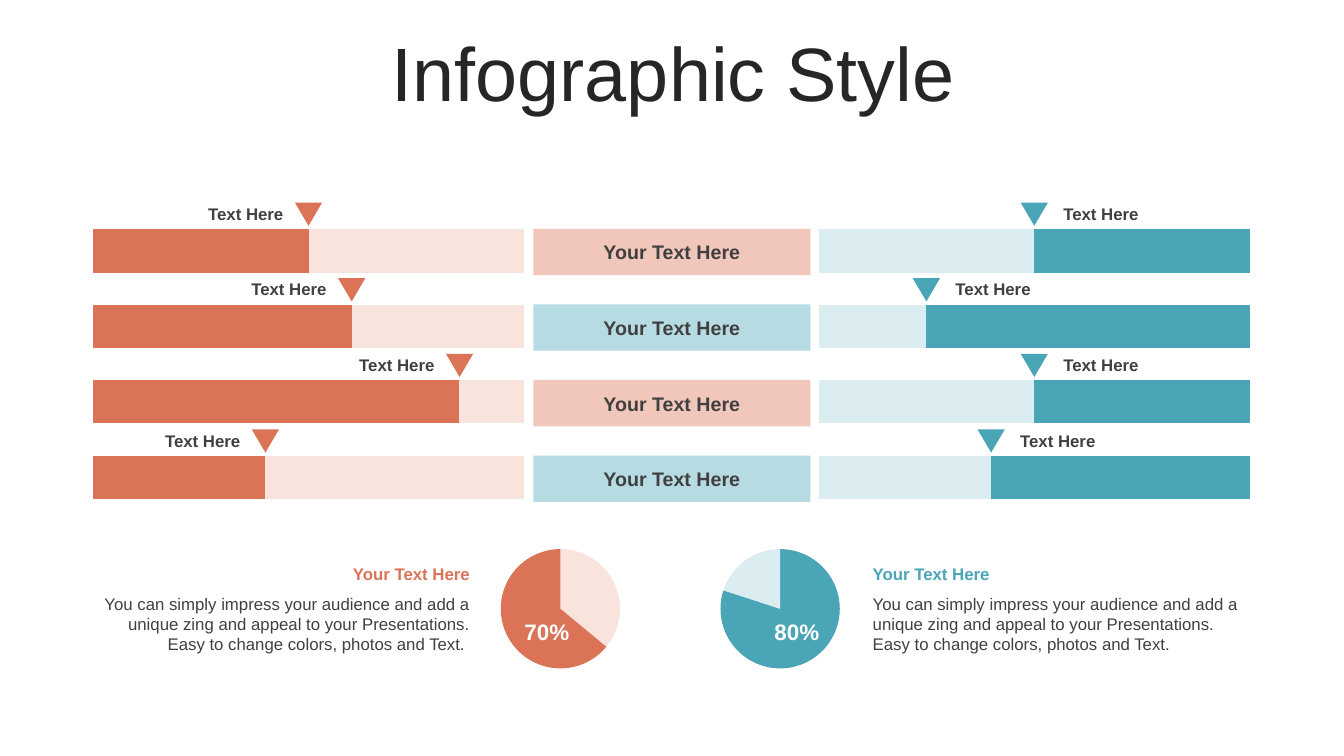
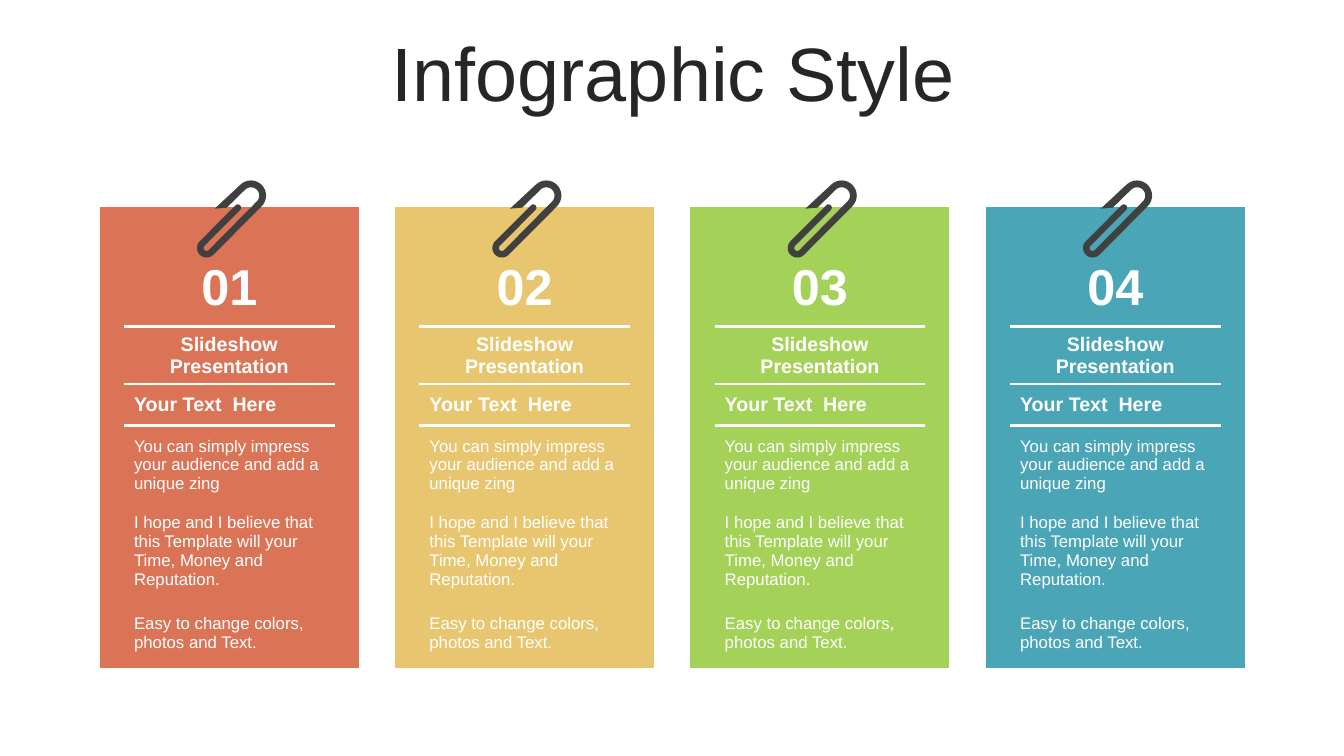
from dataclasses import dataclass
from math import cos, radians, sin

from lxml import etree
from pptx import Presentation
from pptx.chart.data import CategoryChartData
from pptx.dml.color import RGBColor
from pptx.enum.chart import XL_CHART_TYPE
from pptx.enum.shapes import MSO_SHAPE
from pptx.enum.text import MSO_ANCHOR, MSO_AUTO_SIZE, PP_ALIGN
from pptx.oxml.ns import qn
from pptx.util import Inches, Pt

LEFT, CENTER, RIGHT = PP_ALIGN.LEFT, PP_ALIGN.CENTER, PP_ALIGN.RIGHT
TOP, MIDDLE = MSO_ANCHOR.TOP, MSO_ANCHOR.MIDDLE
STACKED_BARS, PIE = XL_CHART_TYPE.BAR_STACKED_100, XL_CHART_TYPE.PIE
RECTANGLE, TRIANGLE = MSO_SHAPE.RECTANGLE, MSO_SHAPE.ISOSCELES_TRIANGLE

COLUMNS, ROWS = 133.33, 75  # grid of square cells
CELL = Inches(0.1)
TITLE_ONLY = 5
NO_GRID_STYLE = "{2D5ABB26-0587-4C30-8999-92F81FD0307C}"


@dataclass(frozen=True)
class Theme:
    font: str = "Arial"
    title_ink: str = "262626"
    ink: str = "404040"
    white: str = "FFFFFF"
    coral: str = "DB7457"
    coral_mid: str = "F1C7BC"
    coral_pale: str = "F8E3DD"
    teal: str = "4AA5B7"
    teal_mid: str = "B7DBE2"
    teal_pale: str = "DBEDF1"
    sand: str = "E7C66F"
    lime: str = "A4D157"
    title_size: int = 54
    number_size: int = 36
    chart_size: int = 18
    percent_size: int = 16
    heading_size: int = 14
    body_size: int = 12
    rule_width: float = 2.25


THEME = Theme()


def cells(*counts):
    return [round(count * CELL) for count in counts]


def paint(fill, color):
    fill.solid()
    fill.fore_color.rgb = RGBColor.from_string(color)


class Deck:
    """Holds the theme and the slide being built; lengths are grid cells."""

    def __init__(self, theme):
        self.theme = theme
        self.file = Presentation()
        self.file.slide_width, self.file.slide_height = cells(COLUMNS, ROWS)
        self.slide = None

    def new_slide(self, title):
        self.slide = self.file.slides.add_slide(self.file.slide_layouts[TITLE_ONLY])
        holder = self.slide.shapes.title
        holder.left, holder.top, holder.width, holder.height = cells(3.5, 3.7, 126.6, 7.9)
        self.fill_text(holder.text_frame, title, self.theme.title_size,
                       self.theme.title_ink, CENTER, MIDDLE)
        paragraph = holder.text_frame.paragraphs[0]
        paragraph.line_spacing = 0.9
        paragraph.space_before = Pt(10)

    def fill_text(self, frame, text, size, color, align=LEFT, anchor=TOP, bold=False):
        frame.word_wrap = True
        frame.vertical_anchor = anchor
        paragraph = frame.paragraphs[0]
        paragraph.alignment = align
        run = paragraph.add_run()
        run.text = text
        run.font.name = self.theme.font
        run.font.size = Pt(size)
        run.font.bold = bold
        run.font.color.rgb = RGBColor.from_string(color)

    def text(self, box, content, size, color, **style):
        frame = self.slide.shapes.add_textbox(*cells(*box)).text_frame
        frame.auto_size = MSO_AUTO_SIZE.SHAPE_TO_FIT_TEXT
        self.fill_text(frame, content, size, color, **style)

    def finish(self, shape, color):
        shape.shadow.inherit = False
        paint(shape.fill, color)
        shape.line.fill.background()
        return shape

    def shape(self, kind, box, color):
        return self.finish(self.slide.shapes.add_shape(kind, *cells(*box)), color)

    def outline(self, points, color):
        scaled = [cells(*point) for point in points]
        builder = self.slide.shapes.build_freeform(*scaled[0])
        builder.add_line_segments(scaled[1:], close=True)
        self.finish(builder.convert_to_shape(), color)

    def chart(self, kind, box, series):
        data = CategoryChartData()
        data.categories = [str(i + 1) for i in range(len(series[0]))]
        for number, values in enumerate(series, 1):
            data.add_series(f"Series {number}", values)
        chart = self.slide.shapes.add_chart(kind, *cells(*box), data).chart
        chart.has_legend = chart.has_title = False
        chart.font.name = self.theme.font
        chart.font.size = Pt(self.theme.chart_size)
        chart.font.color.rgb = RGBColor(0, 0, 0)
        return chart

    def bars(self, box, series, colors, plot_area):
        chart = self.chart(STACKED_BARS, box, series)
        plot = chart.plots[0]
        plot.gap_width, plot.overlap, plot.vary_by_categories = 75, 100, False
        for axis in (chart.category_axis, chart.value_axis):
            axis.has_major_gridlines = False
            axis.visible = False
        for part, color in zip(plot.series, colors):
            paint(part.format.fill, color)
        # Fix the inner plot area so that markers can be placed by value
        area = next(chart._chartSpace.iter(qn("c:plotArea")))
        for old in area.findall(qn("c:layout")):
            area.remove(old)
        layout = etree.Element(qn("c:layout"))
        area.insert(0, layout)
        manual = etree.SubElement(layout, qn("c:manualLayout"))
        settings = [("layoutTarget", "inner"), ("xMode", "edge"), ("yMode", "edge")]
        for tag, value in settings + list(zip("xywh", plot_area)):
            etree.SubElement(manual, qn(f"c:{tag}")).set("val", str(value))

    def pie(self, box, values, colors):
        plot = self.chart(PIE, box, [values]).plots[0]
        plot.vary_by_categories = True
        for index, color in enumerate(colors):
            point = plot.series[0].points[index]
            paint(point.format.fill, color)
            point.format.line.fill.background()

    def table(self, left, top, widths, heights, color):
        frame = self.slide.shapes.add_table(
            len(heights), len(widths), *cells(left, top, sum(widths), sum(heights)))
        next(frame.element.iter(qn("a:tableStyleId"))).text = NO_GRID_STYLE
        table = frame.table
        table.first_row = table.horz_banding = False
        for column, width in zip(table.columns, cells(*widths)):
            column.width = width
        for row, height in zip(table.rows, cells(*heights)):
            row.height = height
        for cell in table.iter_cells():
            paint(cell.fill, color)
        return table

    def cell_rules(self, cell, edges):
        properties = cell._tc.get_or_add_tcPr()
        for position, edge in enumerate(edges):
            line = etree.Element(qn(f"a:ln{edge}"), w=str(int(Pt(self.theme.rule_width))))
            fill = etree.SubElement(line, qn("a:solidFill"))
            etree.SubElement(fill, qn("a:srgbClr")).set("val", self.theme.white)
            properties.insert(position, line)


def arc(center, radius, start, end, steps=16):
    angles = [radians(start + (end - start) * i / steps) for i in range(steps + 1)]
    return [(center[0] + radius * cos(a), center[1] + radius * sin(a)) for a in angles]


# Comparison slide
PITCH = 7.5
BARS_TOP, BARS_WIDTH, BARS_HEIGHT = 20.2, 42.9, 31.9
PLOT_AREA = (0, 0.03, 0.998, 0.939)
BLURB = ("You can simply impress your audience and add a unique zing and appeal "
         "to your Presentations. Easy to change colors, photos and Text.")


def bar_side(deck, left, shares, colors, marker_color, align):
    """Stacked bars with a marker and a label at each split, top row first."""
    bottom_up = shares[::-1]
    deck.bars((left, BARS_TOP, BARS_WIDTH, BARS_HEIGHT),
              [bottom_up, [100 - share for share in bottom_up]], colors, PLOT_AREA)
    for row, share in enumerate(shares):
        split = left + BARS_WIDTH * PLOT_AREA[2] * share / 100
        marker = deck.shape(TRIANGLE, (split - 1.35, 20.1 + row * PITCH, 2.7, 2.3),
                            marker_color)
        marker.rotation = 180
        label_left = split - 15.2 if align == RIGHT else split + 1.9
        deck.text((label_left, 19.7 + row * PITCH, 13.7, 3), "Text Here",
                  THEME.body_size, THEME.ink, align=align, bold=True)


def summary(deck, pie_left, values, colors, percent, percent_left,
            text_left, blurb, accent, align):
    deck.pie((pie_left, 53.1, 14.6, 14.6), values, colors)
    deck.text((percent_left, 60.8, 7.9, 3.7), percent, THEME.percent_size,
              THEME.white, align=CENTER, anchor=MIDDLE, bold=True)
    deck.text((text_left, 55.4, 39.4, 3), "Your Text Here", THEME.body_size,
              accent, align=align, bold=True)
    deck.text((text_left, 58.4, 39.4, 7.1), blurb, THEME.body_size,
              THEME.ink, align=align)


def comparison_slide(deck):
    deck.new_slide("Infographic Style")
    bar_side(deck, 9.2, [50, 60, 85, 40], (THEME.coral, THEME.coral_pale),
             THEME.coral, RIGHT)
    bar_side(deck, 81.2, [50, 25, 50, 40], (THEME.teal_pale, THEME.teal),
             THEME.teal, LEFT)

    # Row names between the two sides
    for row, color in enumerate([THEME.coral_mid, THEME.teal_mid] * 2):
        name = deck.shape(RECTANGLE, (52.9, 22.7 + row * PITCH, 27.5, 4.6), color)
        deck.fill_text(name.text_frame, "Your Text Here", THEME.heading_size,
                       THEME.ink, CENTER, MIDDLE, bold=True)

    # Pies with their summaries; the right-aligned one keeps its closing space
    summary(deck, 48.3, [36, 64], (THEME.coral_pale, THEME.coral), "70%", 50.3,
            8.2, BLURB + " ", THEME.coral, RIGHT)
    summary(deck, 70.1, [80, 20], (THEME.teal, THEME.teal_pale), "80%", 75.1,
            85.6, BLURB, THEME.teal, LEFT)


# Card slide
CARD_LEFT, CARD_TOP, CARD_PITCH = 9.9, 20.5, 29.3
CARD_WIDTHS = (2.4, 20.9, 2.3)
CARD_HEIGHTS = (4.2, 7.7, 5.7, 4.1, 7.9, 9.2, 7)


def paper_clip(deck, left, top):
    """Clip outline: two loops and a rounded tip joined by 45 degree wires."""
    big, small, tip = (left + 15, top - 1.1), (left + 10.6, top + 4.1), (left + 13.7, top + 0.1)
    points = (arc(big, 1.5, -135, 45) + arc(small, 0.95, 45, 225)
              + arc(tip, 0.32, -135, 45) + arc(small, 0.3, 225, 45)
              + arc(big, 0.82, 45, -135)
              + [(left + 12.6, top + 0.1), (left + 11.4, top + 0.2)])
    deck.outline(points, THEME.ink)


def card(deck, left, number, color):
    table = deck.table(left, CARD_TOP, CARD_WIDTHS, CARD_HEIGHTS, color)
    # Text, size, alignment, bold and ruled edges of each row under the clip
    lines = [
        (number, THEME.number_size, CENTER, True, "B"),
        ("Slideshow Presentation", THEME.heading_size, CENTER, True, "TB"),
        ("Your Text  Here", THEME.heading_size, LEFT, True, "T"),
        ("You can simply impress your audience and add a unique zing",
         THEME.body_size, LEFT, False, ""),
        ("I hope and I believe that this Template will your Time, Money and Reputation.",
         THEME.body_size, LEFT, False, ""),
        ("Easy to change colors, photos and Text.", THEME.body_size, LEFT, False, ""),
    ]
    for row, (text, size, align, bold, edges) in enumerate(lines, 1):
        cell = table.cell(row, 1)
        cell.vertical_anchor = MIDDLE
        deck.fill_text(cell.text_frame, text, size, THEME.white, align, None, bold)
        deck.cell_rules(cell, edges)
    paper_clip(deck, left, CARD_TOP)


def card_slide(deck):
    deck.new_slide("Infographic Style")
    for index, color in enumerate([THEME.coral, THEME.sand, THEME.lime, THEME.teal]):
        card(deck, CARD_LEFT + index * CARD_PITCH, f"{index + 1:02}", color)


def main():
    deck = Deck(THEME)
    comparison_slide(deck)
    card_slide(deck)
    deck.file.save("out.pptx")


if __name__ == "__main__":
    main()
